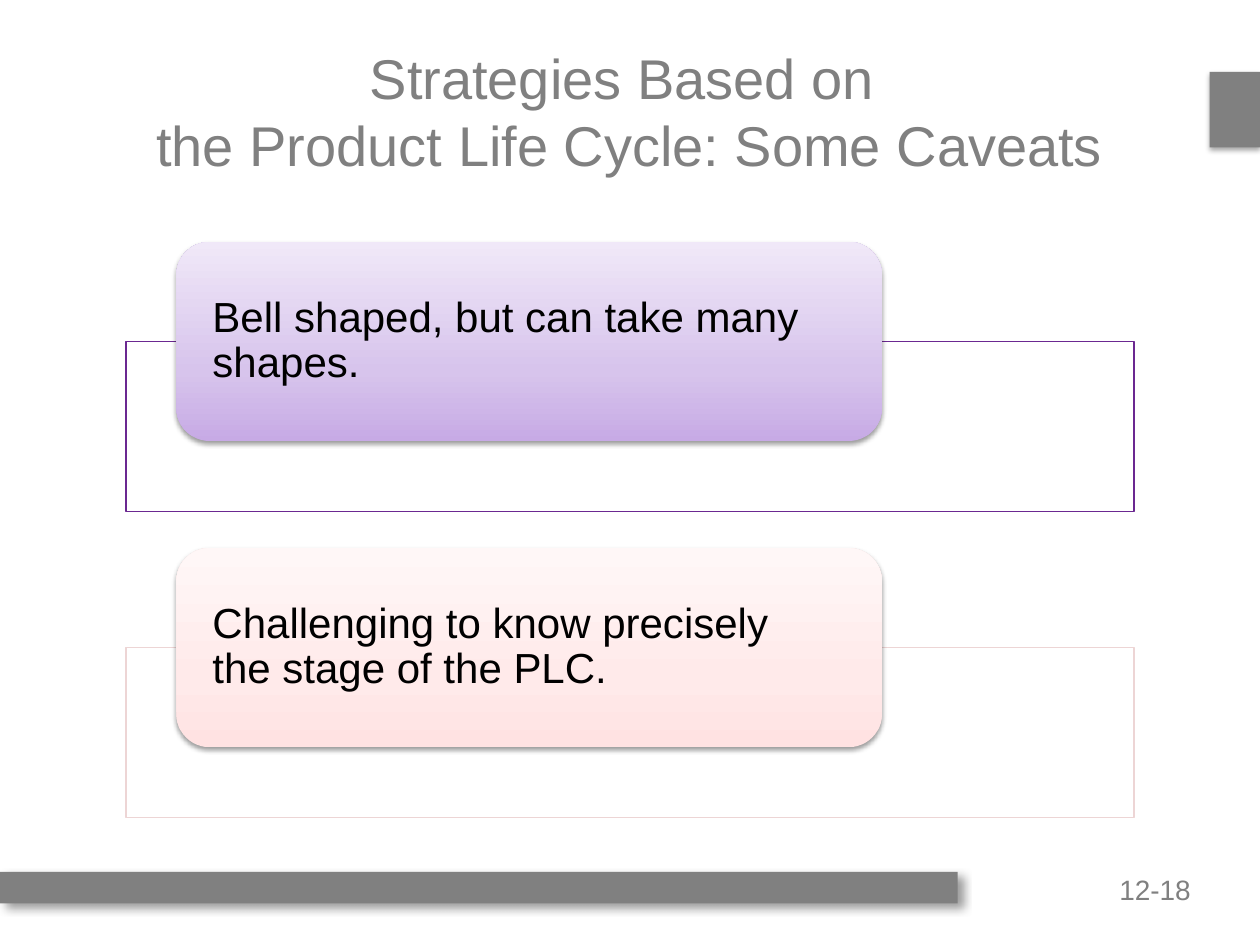
from copy import deepcopy

from lxml import etree
from pptx import Presentation
from pptx.dml.color import RGBColor
from pptx.enum.shapes import MSO_SHAPE
from pptx.enum.text import MSO_ANCHOR, MSO_AUTO_SIZE, PP_ALIGN
from pptx.oxml.ns import qn
from pptx.util import Inches, Pt

RECT, ROUND = MSO_SHAPE.RECTANGLE, MSO_SHAPE.ROUNDED_RECTANGLE
MIDDLE, TOP = MSO_ANCHOR.MIDDLE, MSO_ANCHOR.TOP
LEFT, CENTER, RIGHT = PP_ALIGN.LEFT, PP_ALIGN.CENTER, PP_ALIGN.RIGHT
NO_FIT = MSO_AUTO_SIZE.NONE
GRAY, BLACK, WHITE = "808080", "000000", "FFFFFF"

TITLE = "Strategies Based on \vthe Product Life Cycle: Some Caveats"
CAVEATS = [
    ("Bell shaped, but can take many shapes.", "6B2891",
     ("C7AAE5", "D7C4EC", "F0E8F8")),
    ("Challenging to know precisely \vthe stage of the PLC.", "EDD5D5",
     ("FFE2E2", "FFEAEA", "FFF7F7")),
]


def color(code):
    return RGBColor.from_string(code)


def add_box(slide, kind, box):
    shape = slide.shapes.add_shape(kind, *map(Inches, box))
    shape.shadow.inherit = False
    shape.line.fill.background()
    return shape


def add_shadow(shape, alpha, blur, dist, angle):
    effects = shape._element.spPr.find(qn("a:effectLst"))
    outer = etree.SubElement(
        effects, qn("a:outerShdw"), blurRad=str(Pt(blur)), dist=str(Pt(dist)),
        dir=str(angle * 60000), algn="tl", rotWithShape="0")
    tint = etree.SubElement(outer, qn("a:srgbClr"), val=BLACK)
    etree.SubElement(tint, qn("a:alpha"), val=str(alpha * 1000))


def fill_fade(shape, codes):
    """Fill with three colours that run from the bottom edge to the top."""
    shape.fill.gradient()
    shape.fill.gradient_angle = 90
    stops = shape._element.spPr.find(".//" + qn("a:gsLst"))
    stops.append(deepcopy(stops[-1]))
    for stop, code, place in zip(shape.fill.gradient_stops, codes, (0, 0.35, 1)):
        stop.color.rgb = color(code)
        stop.position = place


def set_text(shape, text, size, code, align, anchor, inset=(0, 0), space=None):
    frame = shape.text_frame
    frame.word_wrap = True
    frame.auto_size = NO_FIT
    frame.vertical_anchor = anchor
    side, edge = map(Inches, inset)
    frame.margin_left = frame.margin_right = side
    frame.margin_top = frame.margin_bottom = edge
    frame.text = text
    para = frame.paragraphs[0]
    para.alignment = align
    para.line_spacing = space
    para.font.name = "Arial"
    para.font.size = Pt(size)
    para.font.color.rgb = color(code)


def add_bar(slide, box, shadow):
    bar = add_box(slide, RECT, box)
    bar.fill.solid()
    bar.fill.fore_color.rgb = color(GRAY)
    add_shadow(bar, *shadow)


def add_frame(slide):
    """Place the side tab, the foot bar and the page number."""
    add_bar(slide, (9.6, 0.57, 0.4, 0.6), (35, 3.1, 1.8, 90))
    add_bar(slide, (0, 6.92, 7.6, 0.25), (38, 5, 4, 45))
    page = slide.shapes.add_textbox(*map(Inches, (7.5, 6.92, 1.95, 0.25)))
    set_text(page, "12-18", 16, GRAY, RIGHT, TOP, space=1.02)


def add_title(slide, box):
    title = slide.shapes.title
    title.left, title.top, title.width, title.height = map(Inches, box)
    set_text(title, TITLE, 32, GRAY, CENTER, MIDDLE, (0.1, 0.05))


def add_caveat(slide, box, text, edge, fade):
    """Place an outlined panel with a label on its upper edge."""
    left, top, width, height = box
    panel = add_box(slide, RECT, (left, top + 0.79, width, height - 0.79))
    panel.fill.solid()
    panel.fill.fore_color.rgb = color(WHITE)
    tint = panel._element.spPr.find(qn("a:solidFill"))[0]
    etree.SubElement(tint, qn("a:alpha"), val="90000")
    panel.line.color.rgb = color(edge)
    panel.line.width = Pt(0.75)

    label = add_box(slide, ROUND, (left + 0.05 * width, top, 0.7 * width, 1.58))
    fill_fade(label, fade)
    add_shadow(label, 38, 3.1, 1.6, 90)
    set_text(label, text, 24, BLACK, LEFT, MIDDLE, (0.21, 0), 0.9)


def add_caveats(slide, box):
    left, top, width, height = box
    gap = 0.29
    step = (height + gap) / len(CAVEATS)
    for i, caveat in enumerate(CAVEATS):
        add_caveat(slide, (left, top + i * step, width, step - gap), *caveat)


def main():
    deck = Presentation()
    deck.slide_width, deck.slide_height = Inches(10), Inches(7.5)
    slide = deck.slides.add_slide(deck.slide_layouts[5])
    slide.background.fill.solid()
    slide.background.fill.fore_color.rgb = color(WHITE)
    add_frame(slide)
    add_title(slide, (0.6, 0.25, 8.8, 1.25))
    add_caveats(slide, (1, 1.92, 8, 4.57))
    deck.save("out.pptx")


if __name__ == "__main__":
    main()
